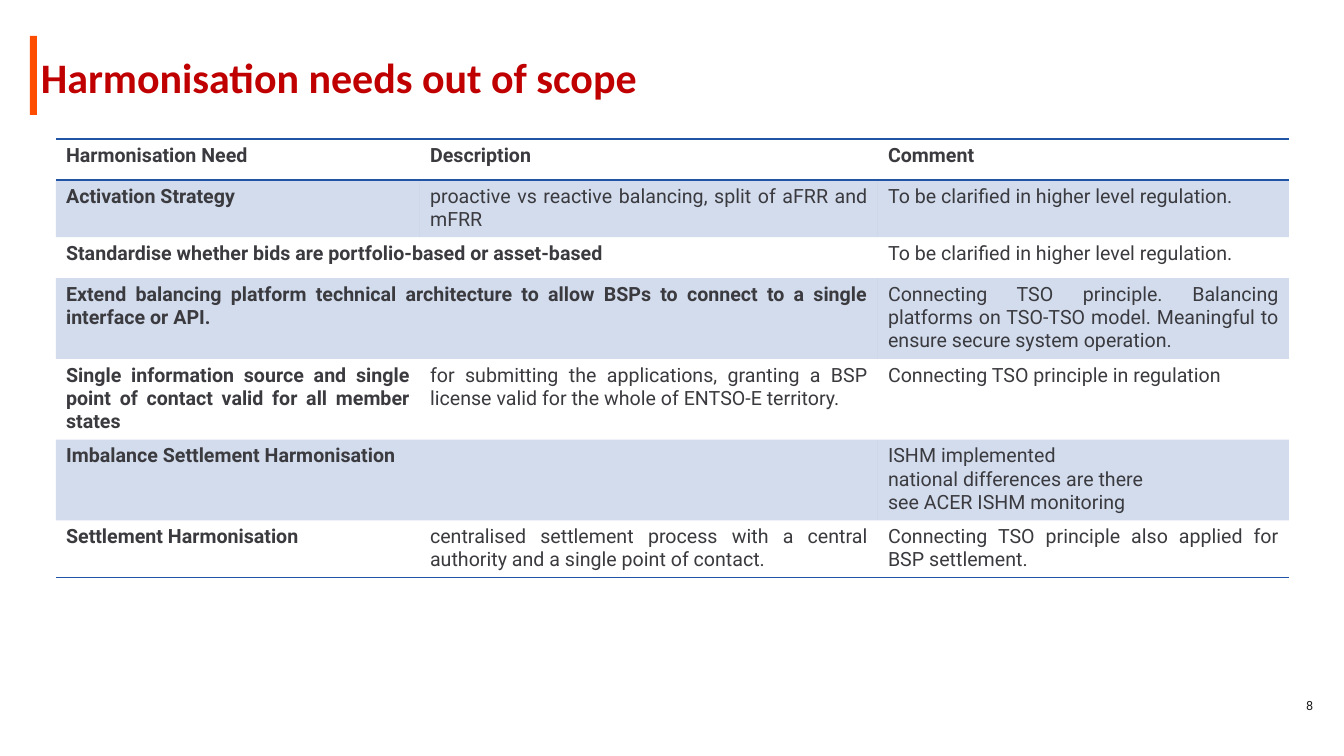
import dataclasses

import lxml.etree
import pptx
import pptx.dml.color
import pptx.enum.shapes
import pptx.enum.text
import pptx.oxml.ns
import pptx.util

ALIGN = pptx.enum.text.PP_ALIGN
ANCHOR = pptx.enum.text.MSO_ANCHOR
PLAIN_TABLE = "{2D5ABB26-0587-4C30-8999-92F81FD0307C}"


@dataclasses.dataclass(frozen=True)
class Theme:
    accent: str = "FF4D00"
    title: str = "C00000"
    blue: str = "2054A5"
    ink: str = "3A3A3F"
    number: str = "1D1D20"
    band_alpha: int = 20
    title_font: str = "Calibri"
    body_font: str = "Roboto"
    title_size: int = 30
    body_size: int = 14
    number_size: int = 9


THEME = Theme()
COLUMNS = (364, 458, 411)
ROW_HEIGHTS = {1: 41, 2: 56, 3: 80}
NEEDS = (
    (1, "Harmonisation Need", "Description", "Comment"),
    (2, "Activation Strategy",
     "proactive vs reactive balancing, split of aFRR and mFRR",
     "To be clarified in higher level regulation."),
    (1, "Standardise whether bids are portfolio-based or asset-based", None,
     "To be clarified in higher level regulation."),
    (3, "Extend balancing platform technical architecture to allow BSPs to "
     "connect to a single interface or API.", None,
     "Connecting TSO principle. Balancing platforms on TSO-TSO model. "
     "Meaningful to ensure secure system operation."),
    (3, "Single information source and single point of contact valid for all "
     "member states",
     "for submitting the applications, granting a BSP license valid for the "
     "whole of ENTSO-E territory.",
     "Connecting TSO principle in regulation"),
    (3, "Imbalance Settlement Harmonisation", None,
     "ISHM implemented\nnational differences are there\n"
     "see ACER ISHM monitoring"),
    (2, "Settlement Harmonisation",
     "centralised settlement process with a central authority and a single "
     "point of contact.",
     "Connecting TSO principle also applied for BSP settlement."),
)


def px(length):
    return pptx.util.Emu(round(length * 914400 / 100.8))


def rgb(value):
    return pptx.dml.color.RGBColor.from_string(value)


def write(frame, text, align, font, size, color, bold=False, spacing=None):
    frame.text = text
    formats = {"name": font, "size": pptx.util.Pt(size), "bold": bold}
    for para in frame.paragraphs:
        para.alignment = align
        if spacing:
            para.line_spacing = pptx.util.Pt(spacing)
        for span in para.runs:
            for name, value in formats.items():
                setattr(span.font, name, value)
            span.font.color.rgb = rgb(color)


def add_text(page, box, text, anchor, **style):
    frame = page.shapes.add_textbox(*map(px, box)).text_frame
    frame.word_wrap = True
    frame.vertical_anchor = anchor
    write(frame, text, **style)


def add_heading(page, box):
    left, top, width, height = box
    bar = page.shapes.add_shape(
        pptx.enum.shapes.MSO_SHAPE.RECTANGLE, px(left), px(top), px(7), px(79))
    bar.shadow.inherit = False
    bar.fill.solid()
    bar.fill.fore_color.rgb = rgb(THEME.accent)
    bar.line.fill.background()
    add_text(page, (left + 1, top + 16, width - 1, height - 16),
             "Harmonisation needs out of scope", ANCHOR.TOP, align=ALIGN.LEFT,
             font=THEME.title_font, size=THEME.title_size, color=THEME.title,
             bold=True, spacing=32)


def add_borders(cell, sides):
    properties = cell._tc.get_or_add_tcPr()
    for index, side in enumerate(sides):
        line = lxml.etree.Element(
            pptx.oxml.ns.qn(f"a:ln{side}"), w=str(pptx.util.Pt(1)))
        fill = lxml.etree.SubElement(line, pptx.oxml.ns.qn("a:solidFill"))
        lxml.etree.SubElement(
            fill, pptx.oxml.ns.qn("a:srgbClr"), val=THEME.blue)
        properties.insert(index, line)


def paint_cell(cell, banded):
    if not banded:
        cell.fill.background()
        return
    cell.fill.solid()
    cell.fill.fore_color.rgb = rgb(THEME.blue)
    color = cell._tc.tcPr.find(".//" + pptx.oxml.ns.qn("a:srgbClr"))
    lxml.etree.SubElement(color, pptx.oxml.ns.qn("a:alpha"),
                          val=str(THEME.band_alpha * 1000))


def add_needs_table(page, box):
    table = page.shapes.add_table(
        len(NEEDS), len(COLUMNS), *map(px, box)).table
    table._tbl.tblPr.find(pptx.oxml.ns.qn("a:tableStyleId")).text = PLAIN_TABLE
    table.horz_banding = False
    for column, width in zip(table.columns, COLUMNS):
        column.width = px(width)
    borders = {0: "TB", len(NEEDS) - 1: "B"}
    for row, (lines, *texts) in enumerate(NEEDS):
        table.rows[row].height = px(ROW_HEIGHTS[lines])
        if texts[1] is None:
            table.cell(row, 0).merge(table.cell(row, 1))
        for column, text in enumerate(texts):
            cell = table.cell(row, column)
            paint_cell(cell, row % 2 == 1)
            add_borders(cell, borders.get(row, ""))
            if text:
                write(cell.text_frame, text, ALIGN.JUSTIFY, THEME.body_font,
                      THEME.body_size, THEME.ink,
                      bold=row == 0 or column == 0)


def add_page_number(page, box):
    add_text(page, box, "8", ANCHOR.MIDDLE, align=ALIGN.RIGHT,
             font=THEME.body_font, size=THEME.number_size,
             color=THEME.number, spacing=9)


def main():
    deck = pptx.Presentation()
    deck.slide_width, deck.slide_height = px(1344), px(756)
    page = deck.slides.add_slide(deck.slide_layouts[6])
    add_page_number(page, (680, 687, 643, 40))
    add_heading(page, (30, 36, 1282, 119))
    height = sum(ROW_HEIGHTS[need[0]] for need in NEEDS)
    add_needs_table(page, (56, 139, sum(COLUMNS), height))
    deck.save("out.pptx")


if __name__ == "__main__":
    main()
